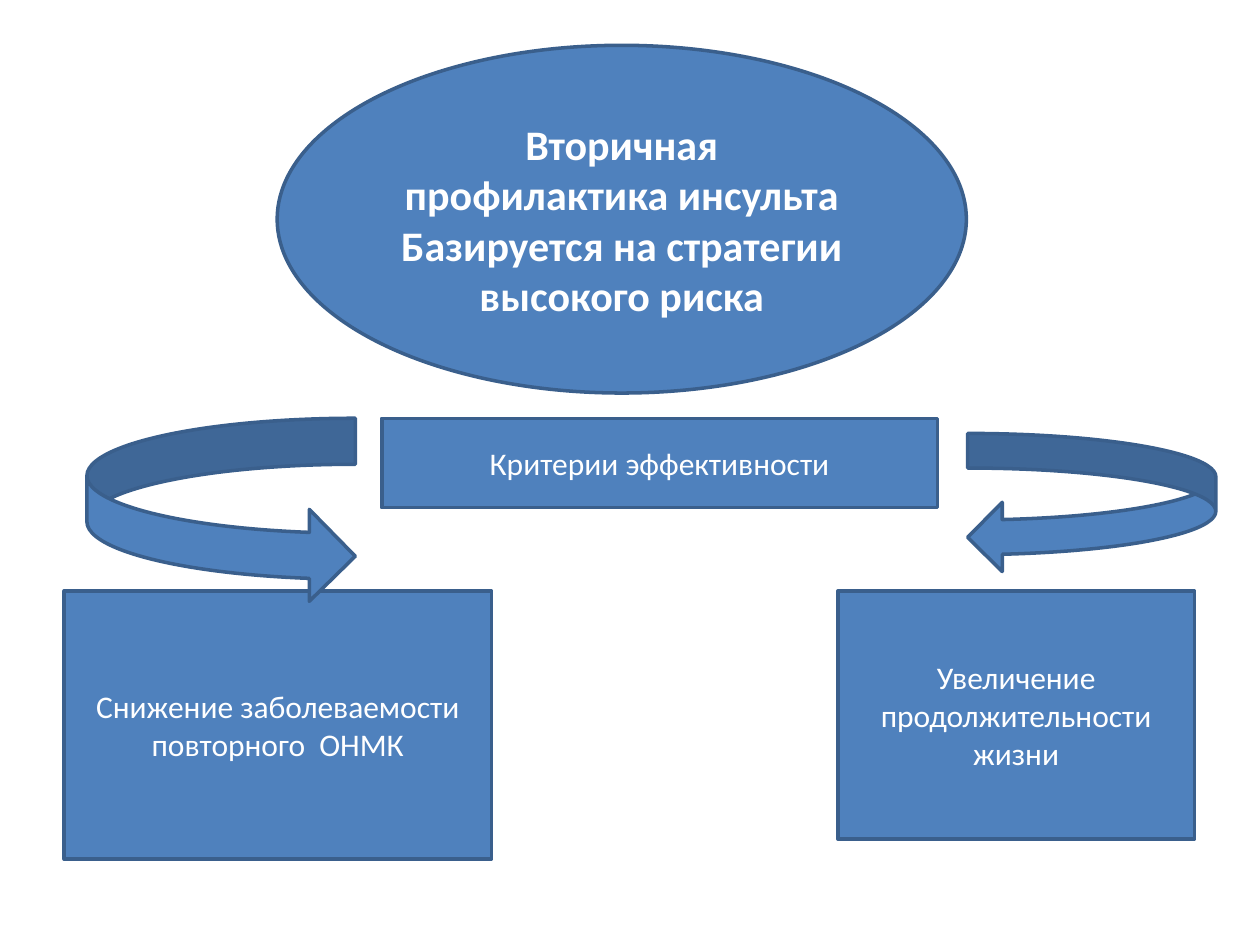
from pptx import Presentation
from pptx.dml.color import RGBColor
from pptx.enum.shapes import MSO_SHAPE as Shape
from pptx.enum.text import MSO_ANCHOR as Anchor, PP_ALIGN as Align
from pptx.util import Inches, Pt

COLORS = {"fill": "4F81BD", "line": "3A5F8C", "text": "FFFFFF"}
BLANK_LAYOUT = 6


class SlideBuilder:
    font_name = "Calibri"
    line_width = Pt(2)

    def __init__(self, deck):
        self.page = deck.slides.add_slide(deck.slide_layouts[BLANK_LAYOUT])

    def color(self, name):
        return RGBColor.from_string(COLORS[name])

    def shape(self, kind, bounds):
        shape = self.page.shapes.add_shape(kind, *map(Inches, bounds))
        shape.shadow.inherit = False
        shape.fill.solid()
        shape.fill.fore_color.rgb = self.color("fill")
        shape.line.color.rgb = self.color("line")
        shape.line.width = self.line_width
        return shape

    def box(self, kind, bounds, lines, size=18, bold=False):
        frame = self.shape(kind, bounds).text_frame
        frame.word_wrap = True
        frame.vertical_anchor = Anchor.MIDDLE
        frame.text = "\n".join(lines)
        style = {"name": self.font_name, "size": Pt(size), "bold": bold}
        for para in frame.paragraphs:
            para.alignment = Align.CENTER
            for span in para.runs:
                for key, value in style.items():
                    setattr(span.font, key, value)
                span.font.color.rgb = self.color("text")


def main():
    deck = Presentation()
    deck.slide_width, deck.slide_height = Inches(10), Inches(7.5)
    builder = SlideBuilder(deck)

    builder.box(
        Shape.OVAL,
        (2.2, 0.36, 5.47, 2.76),
        ["Вторичная профилактика инсульта", "Базируется на стратегии высокого риска"],
        size=24,
        bold=True,
    )
    criteria = [
        ((3.03, 3.32, 4.41, 0.71), "Критерии эффективности"),
        ((0.51, 4.69, 3.39, 2.13), "Снижение заболеваемости повторного  ОНМК"),
        ((6.65, 4.69, 2.83, 1.97), "Увеличение продолжительности жизни"),
    ]
    for bounds, text in criteria:
        builder.box(Shape.RECTANGLE, bounds, [text])

    builder.shape(Shape.CURVED_RIGHT_ARROW, (0.69, 3.32, 2.13, 1.46))
    builder.shape(Shape.CURVED_LEFT_ARROW, (7.68, 3.44, 1.97, 1.1))
    deck.save("out.pptx")


if __name__ == "__main__":
    main()
